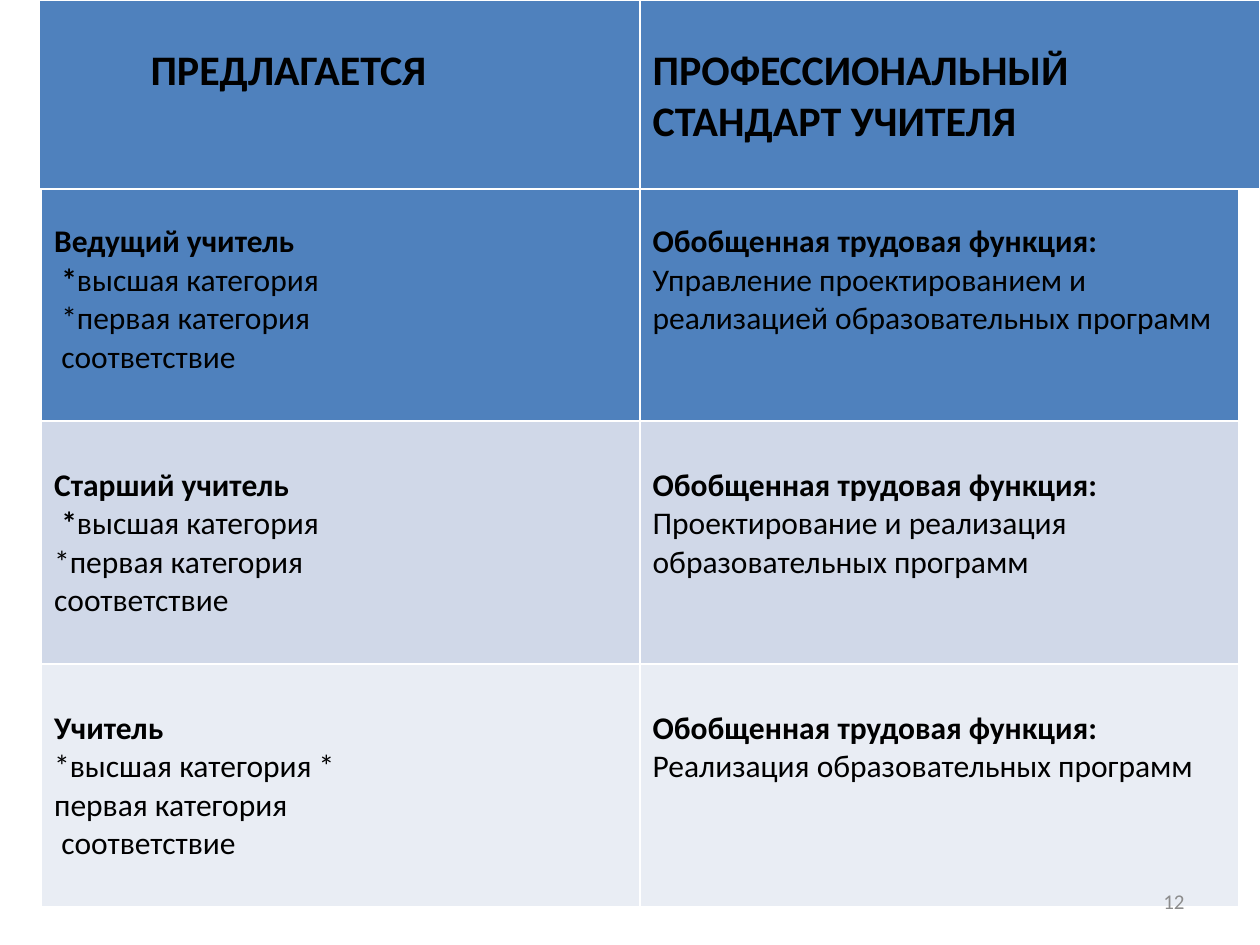
from dataclasses import dataclass

from lxml import etree
from pptx import Presentation
from pptx.dml.color import RGBColor
from pptx.enum.text import MSO_ANCHOR, PP_ALIGN
from pptx.oxml.ns import qn
from pptx.util import Inches, Pt

LEFT, CENTER, RIGHT = PP_ALIGN.LEFT, PP_ALIGN.CENTER, PP_ALIGN.RIGHT
MIDDLE = MSO_ANCHOR.MIDDLE
BLANK_LAYOUT = 6
PAGE_WIDTH, PAGE_HEIGHT = 10, 7.5
FONT = "Calibri"
COLORS = {
    "header": "4F81BD",
    "band": "D0D8E8",
    "pale": "E9EDF4",
    "border": "FFFFFF",
    "text": "000000",
    "number": "8C8C8C",
}
CELL_TOP = 0.36
HEADER_SHIFT = 0.91  # right margin that moves the centred heading to the left


@dataclass
class Grid:
    left: float
    top: float
    columns: list[float]
    row_height: float


@dataclass
class Level:
    title: str
    categories: list[list[tuple[str, bool]]]
    function: str
    fill: str


FUNCTION_TITLE = "Обобщенная трудовая функция:"
HEADER_GRID = Grid(0.31, 0, [4.77, 4.92], 1.5)
LEVEL_GRID = Grid(0.33, 1.41, [4.75, 4.75], 1.93)
STARRED = [(" *", True), ("высшая категория", False)]
LEVELS = [
    Level("Ведущий учитель",
          [STARRED, [(" *первая категория", False)], [(" соответствие", False)]],
          "Управление проектированием и реализацией образовательных программ",
          "header"),
    Level("Старший учитель",
          [STARRED, [("*первая категория", False)], [("соответствие", False)]],
          "Проектирование и реализация образовательных программ",
          "band"),
    Level("Учитель",
          [[("*высшая категория *", False)], [("первая категория", False)],
           [(" соответствие", False)]],
          "Реализация образовательных программ",
          "pale"),
]


def write(frame, lines, *, size=18, color="text", align=LEFT):
    """Fill a text frame with lines, each a list of (text, bold) spans."""
    for index, line in enumerate(lines):
        para = frame.paragraphs[0] if index == 0 else frame.add_paragraph()
        para.alignment = align
        for text, bold in line:
            span = para.add_run()
            span.text = text
            span.font.name = FONT
            span.font.size = Pt(size)
            span.font.bold = bold
            span.font.color.rgb = RGBColor.from_string(COLORS[color])


def style_cell(cell, fill: str):
    """Set the margins, white borders and fill of a cell."""
    cell.margin_top = Inches(CELL_TOP)
    properties = cell._tc.get_or_add_tcPr()
    for side in ("a:lnL", "a:lnR", "a:lnT", "a:lnB"):
        line = etree.SubElement(properties, qn(side), w=str(Pt(1)))
        solid = etree.SubElement(line, qn("a:solidFill"))
        etree.SubElement(solid, qn("a:srgbClr"), val=COLORS["border"])
    cell.fill.solid()
    cell.fill.fore_color.rgb = RGBColor.from_string(COLORS[fill])


def add_grid(page, grid: Grid, fills: list[str]):
    """Add a styled table with one row for each fill."""
    table = page.shapes.add_table(
        len(fills), len(grid.columns), Inches(grid.left), Inches(grid.top),
        Inches(sum(grid.columns)), Inches(grid.row_height * len(fills))).table
    table.first_row = table.horz_banding = False
    for column, width in zip(table.columns, grid.columns):
        column.width = Inches(width)
    for row, fill in zip(table.rows, fills):
        row.height = Inches(grid.row_height)
        for cell in row.cells:
            style_cell(cell, fill)
    return table


def add_levels(page):
    table = add_grid(page, LEVEL_GRID, [level.fill for level in LEVELS])
    for row, level in enumerate(LEVELS):
        write(table.cell(row, 0).text_frame,
              [[(level.title, True)], *level.categories])
        write(table.cell(row, 1).text_frame,
              [[(FUNCTION_TITLE, True)], [(level.function, False)]])


def add_page_number(page):
    box = page.shapes.add_textbox(
        Inches(0.717 * PAGE_WIDTH), Inches(0.927 * PAGE_HEIGHT),
        Inches(0.233 * PAGE_WIDTH), Inches(0.053 * PAGE_HEIGHT))
    frame = box.text_frame
    frame.word_wrap = True
    frame.vertical_anchor = MIDDLE
    write(frame, [[("12", False)]], size=12, color="number", align=RIGHT)


def add_header(page):
    proposed, standard = add_grid(page, HEADER_GRID, ["header"]).rows[0].cells
    proposed.margin_right = Inches(HEADER_SHIFT)
    write(proposed.text_frame, [[("ПРЕДЛАГАЕТСЯ", True)]], size=24, align=CENTER)
    write(standard.text_frame,
          [[("ПРОФЕССИОНАЛЬНЫЙ СТАНДАРТ УЧИТЕЛЯ", True)]], size=24)


def main():
    deck = Presentation()
    deck.slide_width, deck.slide_height = Inches(PAGE_WIDTH), Inches(PAGE_HEIGHT)
    page = deck.slides.add_slide(deck.slide_layouts[BLANK_LAYOUT])
    add_levels(page)
    add_page_number(page)
    add_header(page)
    deck.save("out.pptx")


if __name__ == "__main__":
    main()
